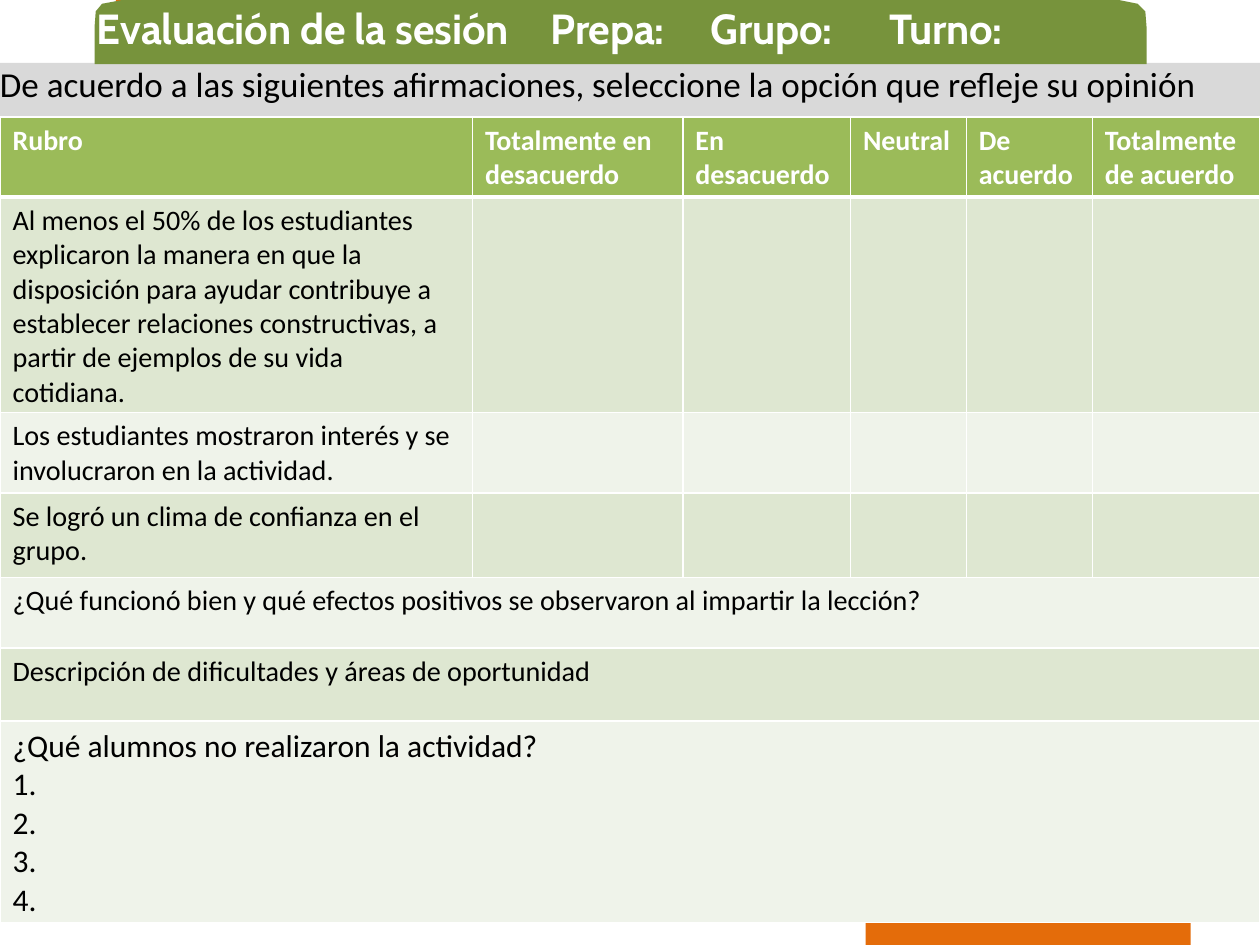
"""Build the session evaluation slide with its rating table."""
from lxml import etree
from pptx import Presentation
from pptx.dml.color import RGBColor
from pptx.enum.shapes import MSO_SHAPE
from pptx.enum.text import MSO_ANCHOR, PP_ALIGN
from pptx.oxml.ns import qn
from pptx.util import Inches, Pt

RECTANGLE = MSO_SHAPE.RECTANGLE
TOP = MSO_ANCHOR.TOP
LEFT = PP_ALIGN.LEFT

COLORS = {
    "orange": "E46C0A", "gray": "D9D9D9", "banner": "77933C", "header": "9BBB59",
    "dark_band": "DEE7D1", "light_band": "EFF3EA", "white": "FFFFFF", "black": "000000",
}
TITLE_PARTS = ["Evaluación de la sesión", "Prepa:", "Grupo:", "Turno:"]
TITLE_TABS = [3.6, 4.87, 6.29]
INSTRUCTION = "De acuerdo a las siguientes afirmaciones, seleccione la opción que refleje su opinión"
HEADERS = ["Rubro", "Totalmente en desacuerdo", "En desacuerdo", "Neutral",
           "De acuerdo", "Totalmente de acuerdo"]
STATEMENTS = [
    "Al menos el 50% de los estudiantes explicaron la manera en que la disposición para "
    "ayudar contribuye a establecer relaciones constructivas, a partir de ejemplos de su "
    "vida cotidiana.",
    "Los estudiantes mostraron interés y se involucraron en la actividad.",
    "Se logró un clima de confianza en el grupo.",
]
QUESTIONS = [
    "¿Qué funcionó bien y qué efectos positivos se observaron al impartir la lección?",
    "Descripción de dificultades y áreas de oportunidad",
    "\n".join(["¿Qué alumnos no realizaron la actividad?", "1.", "2.", "3.", "4."]),
]
COLUMN_WIDTHS = [3.75, 1.67, 1.33, 0.92, 1, 1.33]
ROW_HEIGHTS = [0.57, 0.78, 0.62, 0.67, 0.56, 0.58, 0.78]
ACCENT_BARS = [(0.92, -0.01), (6.87, 7.1)]
BANNER_POINTS = [
    (8.58, 0), (1.27, 0), (0.97, 0), (0.81, 0.03), (0.76, 0.09), (0.75, 0.22), (0.75, 0.51),
    (9.1, 0.51), (9.1, 0.22), (9.09, 0.09), (9.03, 0.03), (8.88, 0),
]


def color(name):
    return RGBColor.from_string(COLORS[name])


def paint(shape, fill):
    shape.shadow.inherit = False
    shape.fill.solid()
    shape.fill.fore_color.rgb = color(fill)
    shape.line.fill.background()


def add_bar(slide, left, top, width, height, fill):
    bar = slide.shapes.add_shape(RECTANGLE, *map(Inches, (left, top, width, height)))
    paint(bar, fill)
    return bar


def set_margins(text_frame, top=0):
    text_frame.margin_left = text_frame.margin_right = text_frame.margin_bottom = 0
    text_frame.margin_top = Inches(top)
    text_frame.word_wrap = True
    text_frame.vertical_anchor = TOP


def style_text(text_frame, size, font_color, bold=False, name="Calibri"):
    for paragraph in text_frame.paragraphs:
        paragraph.alignment = LEFT
        for run in paragraph.runs:
            run.font.size = Pt(size)
            run.font.name = name
            run.font.bold = bold
            run.font.color.rgb = color(font_color)


def add_banner(slide):
    start, *others = [(Inches(x), Inches(y)) for x, y in BANNER_POINTS]
    builder = slide.shapes.build_freeform(*start)
    builder.add_line_segments(others, close=True)
    paint(builder.convert_to_shape(), "banner")


def add_title(slide):
    title = slide.shapes.add_textbox(Inches(0.75), 0, Inches(8.33), Inches(0.42))
    text_frame = title.text_frame
    set_margins(text_frame, 0.02)
    text_frame.text = "\t".join(TITLE_PARTS)
    style_text(text_frame, 24, "white", True, "Cabin")
    paragraph = text_frame.paragraphs[0]
    paragraph.space_before = Pt(1.2)
    properties = paragraph._p.get_or_add_pPr()
    properties.set("marL", str(Inches(0.02)))
    tab_list = etree.SubElement(properties, qn("a:tabLst"))
    for position in TITLE_TABS:
        etree.SubElement(tab_list, qn("a:tab"), pos=str(Inches(position)), algn="l")
    for run in paragraph.runs:
        run.font._element.set("spc", "-10")


def add_borders(cell, bottom_width):
    properties = cell._tc.get_or_add_tcPr()
    widths = {"a:lnL": 1, "a:lnR": 1, "a:lnT": 1, "a:lnB": bottom_width}
    for index, (tag, width) in enumerate(widths.items()):
        line = etree.Element(qn(tag), w=str(Pt(width)))
        fill = etree.SubElement(line, qn("a:solidFill"))
        etree.SubElement(fill, qn("a:srgbClr"), val=COLORS["white"])
        properties.insert(index, line)


def add_rating_table(slide):
    rows = [HEADERS] + [[text] for text in STATEMENTS + QUESTIONS]
    frame = slide.shapes.add_table(len(rows), len(HEADERS), 0, Inches(0.93),
                                   Inches(10), Inches(sum(ROW_HEIGHTS)))
    table = frame.table
    for column, width in zip(table.columns, COLUMN_WIDTHS):
        column.width = Inches(width)
    for row, height in zip(table.rows, ROW_HEIGHTS):
        row.height = Inches(height)
    last = len(rows) - 1
    for row_index, texts in enumerate(rows):
        is_header = row_index == 0
        band = "header" if is_header else "dark_band" if row_index % 2 else "light_band"
        size = 18 if row_index == last else 16 if is_header else 16.1
        for cell in table.rows[row_index].cells:
            cell.fill.solid()
            cell.fill.fore_color.rgb = color(band)
            add_borders(cell, 3 if is_header else 1)
        for column_index, text in enumerate(texts):
            text_frame = table.cell(row_index, column_index).text_frame
            text_frame.text = text
            style_text(text_frame, size, "white" if is_header else "black", is_header)
        if row_index > len(STATEMENTS):
            table.cell(row_index, 0).merge(table.cell(row_index, len(HEADERS) - 1))


def main():
    presentation = Presentation()
    presentation.slide_width = Inches(10)
    presentation.slide_height = Inches(7.5)
    slide = presentation.slides.add_slide(presentation.slide_layouts[6])
    for left, top in ACCENT_BARS:
        add_bar(slide, left, top, 2.58, 0.42, "orange")
    panel = add_bar(slide, 0, 0.5, 10, 6.67, "gray")
    set_margins(panel.text_frame)
    panel.text_frame.text = INSTRUCTION
    style_text(panel.text_frame, 20, "black")
    add_banner(slide)
    add_title(slide)
    add_rating_table(slide)
    presentation.save("out.pptx")


if __name__ == "__main__":
    main()
